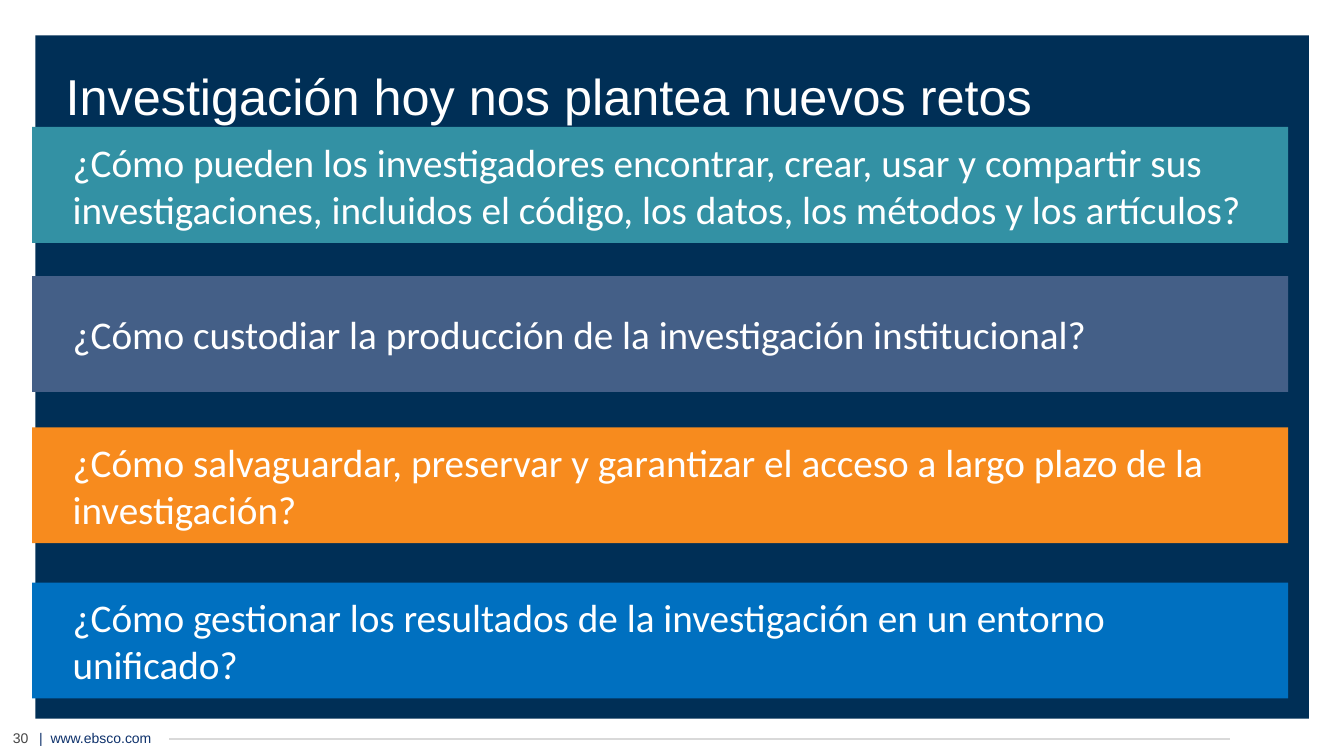
from dataclasses import dataclass
from typing import NamedTuple

from lxml import etree
from pptx import Presentation
from pptx import util as u
from pptx.dml.color import RGBColor
from pptx.enum import shapes, text
from pptx.oxml.ns import qn


@dataclass(frozen=True)
class Theme:
    navy: str = "002F56"
    teal: str = "3391A4"
    slate: str = "445F87"
    orange: str = "F78B1E"
    blue: str = "0070C0"
    white: str = "FFFFFF"
    ink: str = "0E316B"
    gray: str = "454545"
    rule: str = "D9D9D9"
    head: str = "Arial"
    body: str = "Calibri"
    big: int = 36
    mid: int = 28
    small: int = 10


class Box(NamedTuple):
    """Left, top, width and height in percent of the slide."""
    x: float
    y: float
    w: float
    h: float


class Band(NamedTuple):
    top: float
    fill: str
    words: str


T = Theme()
WIDE, HIGH = u.Inches(13.33), u.Inches(7.5)
LEFT, SPAN, TALL = 2.4, 93.45, 15.33  # shared by all bands

BANDS = [
    Band(16.8, T.teal, "¿Cómo pueden los investigadores encontrar, crear, usar y "
         "compartir sus investigaciones, incluidos el código, los datos, "
         "los métodos y los artículos?"),
    Band(36.53, T.slate, "¿Cómo custodiar la producción de la investigación "
         "institucional?"),
    Band(56.53, T.orange, "¿Cómo salvaguardar, preservar y garantizar el acceso "
         "a largo plazo de la investigación?"),
    Band(77.07, T.blue, "¿Cómo gestionar los resultados de la investigación en "
         "un entorno unificado?"),
]


def col(share: float) -> int:
    return round(WIDE * share / 100)


def row(share: float) -> int:
    return round(HIGH * share / 100)


def place(box: Box) -> tuple[int, int, int, int]:
    return col(box.x), row(box.y), col(box.w), row(box.h)


def write(par, words: str, size: int, face: str, tone: str):
    run = par.add_run()
    run.text = words
    run.font.size = u.Pt(size)
    run.font.name = face
    run.font.color.rgb = RGBColor.from_string(tone)
    return run


def add_rect(slide, box: Box, fill: str):
    rect = slide.shapes.add_shape(shapes.MSO_SHAPE.RECTANGLE, *place(box))
    rect.shadow.inherit = False
    rect.fill.solid()
    rect.fill.fore_color.rgb = RGBColor.from_string(fill)
    rect.line.fill.background()
    return rect


def add_band(slide, band: Band) -> None:
    frame = add_rect(slide, Box(LEFT, band.top, SPAN, TALL), band.fill).text_frame
    frame.word_wrap = True
    frame.vertical_anchor = text.MSO_ANCHOR.MIDDLE
    frame.margin_left = u.Inches(0.4)
    par = frame.paragraphs[0]
    par.alignment = text.PP_ALIGN.LEFT
    write(par, band.words, T.mid, T.body, T.white)


def add_note(slide, box: Box, anchor, align):
    frame = slide.shapes.add_textbox(*place(box)).text_frame
    frame.word_wrap = True
    frame.vertical_anchor = anchor
    par = frame.paragraphs[0]
    par.alignment = align
    return par


def set_title(slide, box: Box, words: str) -> None:
    title = slide.shapes.title
    title.left, title.top, title.width, title.height = place(box)
    title.element.getparent().append(title.element)  # above the panel
    frame = title.text_frame
    frame.word_wrap = True
    frame.auto_size = text.MSO_AUTO_SIZE.NONE
    frame.vertical_anchor = text.MSO_ANCHOR.MIDDLE
    par = frame.paragraphs[0]
    par.alignment = text.PP_ALIGN.LEFT
    par.line_spacing = 1.1
    write(par, words, T.big, T.head, T.white)


def add_foot(slide) -> None:
    # Web address, with a wider gap after the bar
    par = add_note(slide, Box(2.18, 95.87, 14.55, 3.6),
                   text.MSO_ANCHOR.TOP, text.PP_ALIGN.LEFT)
    write(par, "|", T.small, T.head, T.ink)
    gap = write(par, " ", T.small, T.head, T.ink)
    gap.font._element.set("spc", "278")
    write(par, "www.ebsco.com", T.small, T.head, T.ink)

    # Page number
    par = add_note(slide, Box(-0.3, 95.87, 3.67, 3.6),
                   text.MSO_ANCHOR.MIDDLE, text.PP_ALIGN.CENTER)
    write(par, "30", T.small, T.head, T.gray)

    # Rule
    rule = slide.shapes.add_connector(
        shapes.MSO_CONNECTOR.STRAIGHT,
        col(12.6), row(97.73), col(91.52), row(97.73))
    rule.line.color.rgb = RGBColor.from_string(T.rule)
    rule.line.width = u.Pt(1)
    etree.SubElement(rule.element.spPr, qn("a:effectLst"))


def main() -> None:
    deck = Presentation()
    deck.slide_width, deck.slide_height = WIDE, HIGH
    slide = deck.slides.add_slide(deck.slide_layouts[5])

    # Panel and footer
    add_rect(slide, Box(2.63, 4.67, 94.75, 90.4), T.navy)
    add_foot(slide)

    # Title and questions
    set_title(slide, Box(4.13, 6.53, 73.82, 11.47),
              "Investigación hoy nos plantea nuevos retos")
    for band in BANDS:
        add_band(slide, band)

    deck.save("out.pptx")


if __name__ == "__main__":
    main()
